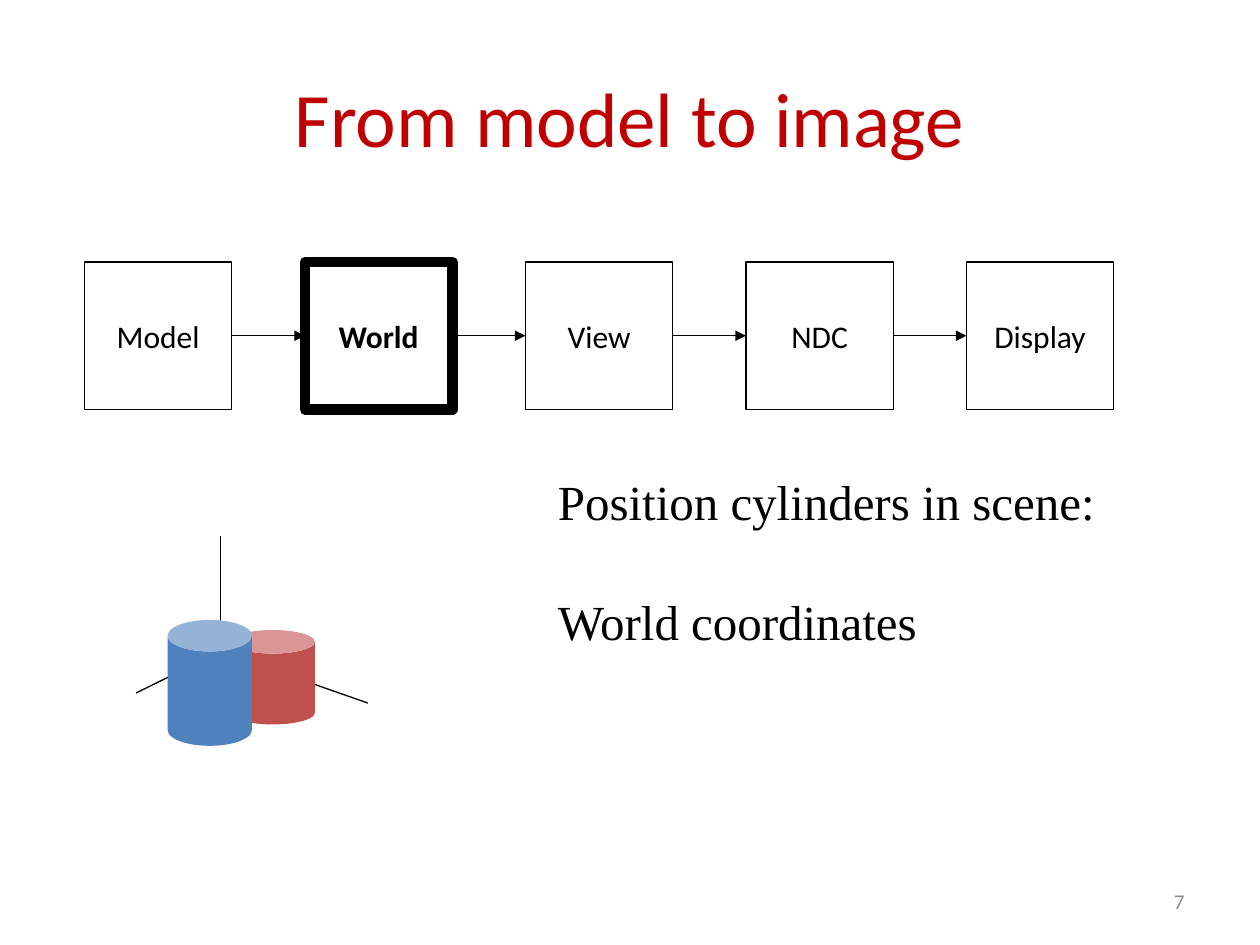
from pptx import Presentation
from pptx.dml.color import RGBColor
from pptx.enum.shapes import MSO_CONNECTOR, MSO_SHAPE
from pptx.enum.text import MSO_ANCHOR, MSO_AUTO_SIZE, PP_ALIGN
from pptx.oxml.ns import qn
from pptx.util import Inches, Pt
from lxml.etree import SubElement

COLORS = {"black": "000000", "title": "C00000", "red": "C0504D",
          "blue": "4F81BD", "number": "8C8C8C"}
STAGES = ["Model", "World", "View", "NDC", "Display"]
CURRENT = "World"
BOX, PITCH, LEFT, TOP = 1.17, 1.75, 0.67, 2.08
ORIGIN = (1.75, 5.17)
AXIS_ENDS = [(1.08, 5.5), (1.75, 4.25), (2.92, 5.58)]


def rgb(name):
    """Return the named colour."""
    return RGBColor.from_string(COLORS[name])


def write(sp, lines, size, color="black", font="Calibri", align=PP_ALIGN.CENTER,
          bold=False, gap=0, **frame):
    """Write lines as paragraphs, with a gap in points between them."""
    tf = sp.text_frame
    for key, value in {"vertical_anchor": MSO_ANCHOR.MIDDLE, "word_wrap": True, **frame}.items():
        setattr(tf, key, value)
    for i, line in enumerate(lines):
        p = tf.add_paragraph() if i else tf.paragraphs[0]
        p.alignment = align
        p.space_before = Pt(gap if i else 0)
        r = p.add_run()
        r.text = line
        for key, value in {"name": font, "size": Pt(size), "bold": bold}.items():
            setattr(r.font, key, value)
        r.font.color.rgb = rgb(color)


def add_text(s, at, lines, size, **style):
    """Add a text box at left, top, width, height."""
    write(s.shapes.add_textbox(*map(Inches, at)), lines, size, **style)


def add_stage(s, i, name):
    """Add the box of one pipeline stage."""
    sp = s.shapes.add_shape(MSO_SHAPE.RECTANGLE, Inches(LEFT + i * PITCH),
                            Inches(TOP), Inches(BOX), Inches(BOX))
    sp.shadow.inherit = False
    sp.fill.background()
    sp.line.color.rgb = rgb("black")
    sp.line.width = Pt(6 if name == CURRENT else 0.75)
    write(sp, [name], 18, bold=name == CURRENT, word_wrap=False)
    return sp


def add_line(s, start=(0, 0), end=(0, 0)):
    """Add a thin black line."""
    c = s.shapes.add_connector(MSO_CONNECTOR.STRAIGHT, *map(Inches, (*start, *end)))
    c.line.color.rgb = rgb("black")
    c.line.width = Pt(0.75)
    SubElement(c._element.spPr, qn("a:effectLst"))
    return c


def add_arrow(s, source, target):
    """Join the right side of one box to the left side of the next."""
    c = add_line(s)
    c.begin_connect(source, 3)
    c.end_connect(target, 1)
    SubElement(c.line._get_or_add_ln(), qn("a:tailEnd"), type="triangle")


def add_cylinder(s, at, color, rim):
    """Add a cylinder without outline."""
    sp = s.shapes.add_shape(MSO_SHAPE.CAN, *map(Inches, at))
    sp.adjustments[0] = rim
    sp.shadow.inherit = False
    sp.fill.solid()
    sp.fill.fore_color.rgb = rgb(color)
    sp.line.fill.background()


def main():
    """Build the slide and save it."""
    prs = Presentation()
    prs.slide_width, prs.slide_height = Inches(10), Inches(7.5)
    s = prs.slides.add_slide(prs.slide_layouts[6])
    add_text(s, (0.5, 0.3, 9, 1.25), ["From model to image"], 44, color="title")
    boxes = [add_stage(s, i, name) for i, name in enumerate(STAGES)]
    for source, target in zip(boxes, boxes[1:]):
        add_arrow(s, source, target)
    for end in AXIS_ENDS:
        add_line(s, ORIGIN, end)
    add_cylinder(s, (1.83, 5, 0.67, 0.75), "red", 0.28)
    add_cylinder(s, (1.33, 4.92, 0.67, 1), "blue", 0.375)
    add_text(s, (4.33, 3.69, 4.5, 1.51),
             ["Position cylinders in scene:", "World coordinates"], 28,
             font="Times New Roman", align=PP_ALIGN.LEFT, gap=35, word_wrap=False,
             vertical_anchor=MSO_ANCHOR.TOP, auto_size=MSO_AUTO_SIZE.SHAPE_TO_FIT_TEXT)
    add_text(s, (7.17, 6.95, 2.33, 0.4), ["7"], 12, color="number", align=PP_ALIGN.RIGHT)
    prs.save("out.pptx")


if __name__ == "__main__":
    main()
